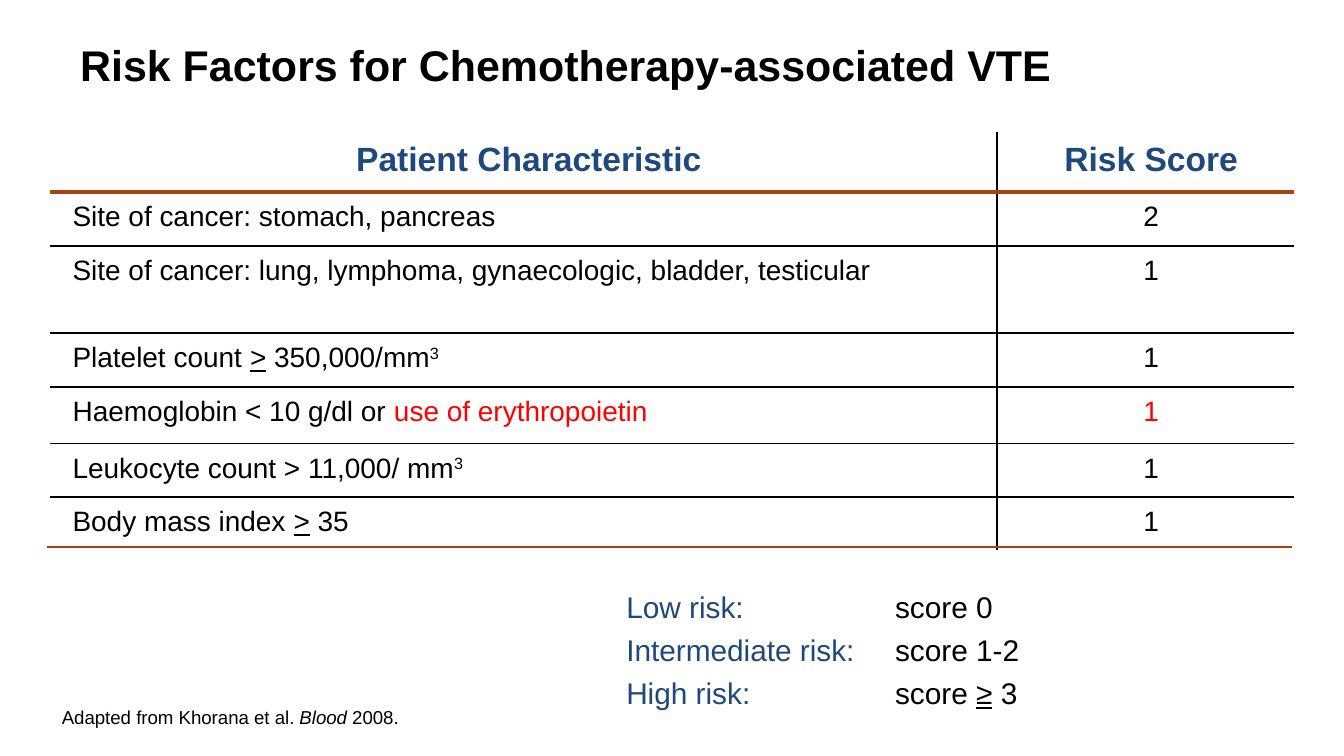
"""Build a slide with the risk score table for chemotherapy-associated VTE."""
import pptx
import pptx.dml.color
import pptx.enum.shapes
import pptx.enum.text
import pptx.oxml.ns
import pptx.util
from lxml import etree

UNDERLINE = {"underline": True}
SUPERSCRIPT = {"superscript": True}
ALERT = {"color": "alert"}
LABEL = {"color": "heading"}

TITLE = [["Risk Factors for Chemotherapy-associated VTE"]]
HEADINGS = ["Patient Characteristic", "Risk Score"]
FACTORS = [
    (["Site of cancer: stomach, pancreas"], "2"),
    (["Site of cancer: lung, lymphoma, gynaecologic, bladder, testicular"], "1"),
    (["Platelet count ", (">", UNDERLINE), " 350,000/mm", ("3", SUPERSCRIPT)], "1"),
    (["Haemoglobin < 10 g/dl or ", ("use of erythropoietin", ALERT)], ("1", ALERT)),
    (["Leukocyte count > 11,000/ mm", ("3", SUPERSCRIPT)], "1"),
    (["Body mass index ", (">", UNDERLINE), " 35"], "1"),
]
LEVELS = [
    [("Low risk: ", LABEL), "\tscore 0"],
    [("Intermediate risk: ", LABEL), "\tscore 1-2"],
    [("High risk: ", LABEL), "\tscore ", ("≥", UNDERLINE), " 3"],
]
SOURCE = [["Adapted from Khorana et al. ", ("Blood ", {"italic": True}), "2008."]]

THEME = {
    "font": "Arial",
    "colors": {"text": "000000", "heading": "1F497D", "alert": "FF0000", "rule": "A8430F"},
    "sizes": {"title": 23, "heading": 18, "body": 15, "level": 16, "source": 10},
}
WIDTH = 10
HEIGHT = WIDTH * 9 / 16
TABLE_LEFT, TABLE_TOP = 0.37, 0.98
COLUMNS = [7.05, 2.21]
ROWS = [0.45, 0.4, 0.65, 0.4, 0.42, 0.4, 0.39]
CELL_MARGINS = (0.17, 0.07, 0.09, 0.07)
LEVEL_TAB = 2
CENTER = pptx.enum.text.PP_ALIGN.CENTER
Inches = pptx.util.Inches


def rgb(name):
    return pptx.dml.color.RGBColor.from_string(THEME["colors"][name])


def add_element(parent, tag, **attributes):
    return etree.SubElement(parent, pptx.oxml.ns.qn(tag), attributes)


def write(frame, paragraphs, *, size, color="text", bold=False, align=None, spacing=None, tab=None):
    for index, runs in enumerate(paragraphs):
        paragraph = frame.add_paragraph() if index else frame.paragraphs[0]
        paragraph.alignment = align
        paragraph.line_spacing = spacing
        if tab:
            tabs = add_element(paragraph._p.get_or_add_pPr(), "a:tabLst")
            add_element(tabs, "a:tab", pos=str(Inches(tab)), algn="l")
        for item in runs:
            text, style = (item, {}) if isinstance(item, str) else item
            run = paragraph.add_run()
            run.text = text
            run.font.name = THEME["font"]
            run.font.size = pptx.util.Pt(THEME["sizes"][size])
            run.font.bold = bold
            run.font.italic = style.get("italic")
            run.font.underline = style.get("underline")
            run.font.color.rgb = rgb(style.get("color", color))
            if style.get("superscript"):
                run._r.get_or_add_rPr().set("baseline", "30000")


def set_margins(target, margins):
    for side, margin in zip(("left", "top", "right", "bottom"), margins):
        setattr(target, f"margin_{side}", Inches(margin))


def add_text(slide, box, paragraphs, margins, **style):
    frame = slide.shapes.add_textbox(*map(Inches, box)).text_frame
    frame.word_wrap = False
    set_margins(frame, margins)
    write(frame, paragraphs, **style)


def set_borders(cell, visible):
    properties = cell._tc.get_or_add_tcPr()
    for side in "LRTB":
        line = add_element(properties, f"a:ln{side}", w=str(pptx.util.Pt(1)))
        if side in visible:
            fill = add_element(line, "a:solidFill")
            add_element(fill, "a:srgbClr", val=THEME["colors"]["text"])
        else:
            add_element(line, "a:noFill")


def add_risk_table(slide):
    box = (TABLE_LEFT, TABLE_TOP, sum(COLUMNS), sum(ROWS))
    table = slide.shapes.add_table(len(ROWS), len(COLUMNS), *map(Inches, box)).table
    table.first_row = table.horz_banding = False
    for column, width in zip(table.columns, COLUMNS):
        column.width = Inches(width)
    for row, height in zip(table.rows, ROWS):
        row.height = Inches(height)
    contents = [[[heading] for heading in HEADINGS]]
    contents += [[factor, [score]] for factor, score in FACTORS]
    for row_index, row in enumerate(contents):
        header = row_index == 0
        style = {"size": "heading", "color": "heading", "bold": True} if header else {"size": "body"}
        horizontal = ("" if header else "T") + ("B" if row_index < len(ROWS) - 1 else "")
        for column_index, runs in enumerate(row):
            cell = table.cell(row_index, column_index)
            set_margins(cell, CELL_MARGINS)
            set_borders(cell, horizontal + "RL"[column_index])
            cell.fill.background()
            align = CENTER if header or column_index else None
            write(cell.text_frame, [runs], align=align, **style)


def add_rule(slide, left, top, weight):
    ends = map(Inches, (left, top, left + sum(COLUMNS), top))
    rule = slide.shapes.add_connector(pptx.enum.shapes.MSO_CONNECTOR.STRAIGHT, *ends)
    rule.line.color.rgb = rgb("rule")
    rule.line.width = pptx.util.Pt(weight)
    add_element(rule._element.spPr, "a:effectLst")


def main():
    presentation = pptx.Presentation()
    presentation.slide_width, presentation.slide_height = Inches(WIDTH), Inches(HEIGHT)
    slide = presentation.slides.add_slide(presentation.slide_layouts[6])
    add_risk_table(slide)
    add_text(slide, (0.49, 0.35, 7.45, 0.31), TITLE, (0.08, 0.04, 0.08, 0),
             size="title", bold=True, align=CENTER, spacing=0.7)
    add_text(slide, (4.5, 4.25, 3.21, 1.14), LEVELS, (0.16, 0.08, 0.08, 0.08),
             size="level", spacing=1.2, tab=LEVEL_TAB)
    add_rule(slide, TABLE_LEFT, TABLE_TOP + ROWS[0], 2.25)
    add_rule(slide, TABLE_LEFT - 0.02, TABLE_TOP + sum(ROWS) - 0.02, 1.5)
    add_text(slide, (0.38, 5.26, 2.69, 0.2), SOURCE, (0.08, 0.04, 0.08, 0.04),
             size="source", spacing=0.7)
    presentation.save("out.pptx")


if __name__ == "__main__":
    main()
